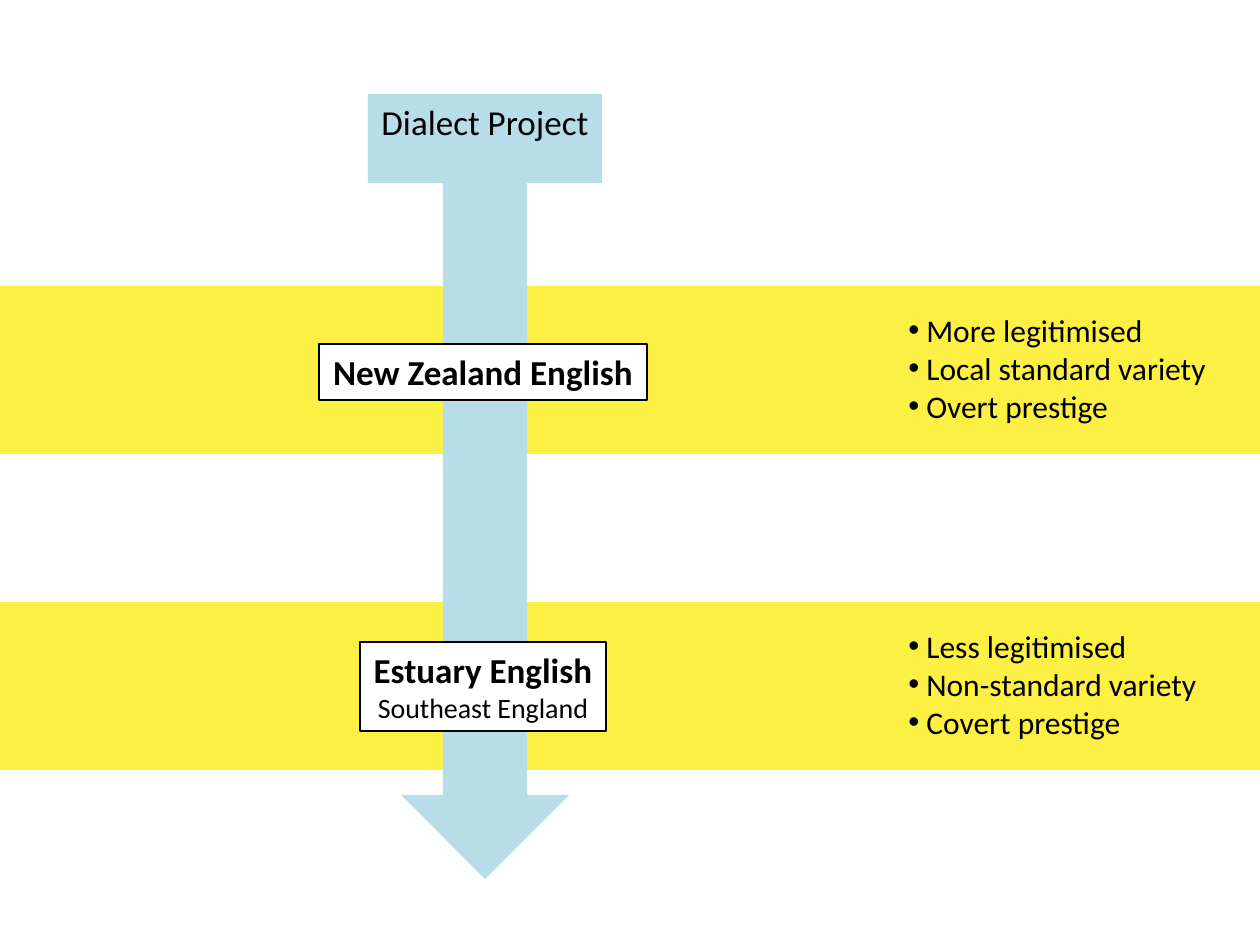
from lxml import etree
from pptx import Presentation
from pptx.dml.color import RGBColor
from pptx.enum.shapes import MSO_SHAPE
from pptx.enum.text import MSO_ANCHOR, PP_ALIGN
from pptx.oxml.ns import qn
from pptx.util import Pt

RECTANGLE, DOWN_ARROW = MSO_SHAPE.RECTANGLE, MSO_SHAPE.DOWN_ARROW
LEFT, CENTER, TOP = PP_ALIGN.LEFT, PP_ALIGN.CENTER, MSO_ANCHOR.TOP

EMU_PER_PX = 914400 / 126
SLIDE_WIDTH, SLIDE_HEIGHT = 1260, 945
BAND_HEIGHT = 168
TRAITS_LEFT, TRAITS_OFFSET, TRAITS_HEIGHT = 896, 19, 127
BULLET_INDENT = 18
YELLOW, BLUE, WHITE, BLACK = "FDF045", "B7DEE8", "FFFFFF", "000000"

# Band top, width of the trait list, traits
BANDS = [
    (602, 316, ["Less legitimised", "Non-standard variety", "Covert prestige"]),
    (286, 326, ["More legitimised", "Local standard variety", "Overt prestige"]),
]
ARROW_BOX = (401, 180, 168, 699)
# Box, fill, outline, lines as (text, size, bold)
LABELS = [
    ((368, 94, 234, 89), BLUE, None, [("Dialect Project", 20, False)]),
    ((319, 344, 328, 56), WHITE, BLACK, [("New Zealand English", 20, True)]),
    ((360, 642, 246, 89), WHITE, BLACK,
     [("Estuary English", 20, True), ("Southeast England", 16, False)]),
]


def px(length):
    return round(length * EMU_PER_PX)


def color(hex_string):
    return RGBColor.from_string(hex_string)


def add_block(slide, kind, box, fill, line=None):
    shape = slide.shapes.add_shape(kind, *map(px, box))
    shape.shadow.inherit = False
    shape.fill.solid()
    shape.fill.fore_color.rgb = color(fill)
    if line:
        shape.line.color.rgb = color(line)
        shape.line.width = Pt(0.75)
    else:
        shape.line.fill.background()
    return shape


def add_bullet(paragraph):
    properties = paragraph._p.get_or_add_pPr()
    properties.set("marL", str(px(BULLET_INDENT)))
    properties.set("indent", str(-px(BULLET_INDENT)))
    etree.SubElement(properties, qn("a:buFont"), typeface="Arial")
    etree.SubElement(properties, qn("a:buChar"), char="•")


def write_lines(shape, lines, align=CENTER, bullets=False):
    frame = shape.text_frame
    frame.word_wrap = False
    frame.vertical_anchor = TOP
    for index, (text, size, bold) in enumerate(lines):
        paragraph = frame.add_paragraph() if index else frame.paragraphs[0]
        paragraph.alignment = align
        if bullets:
            add_bullet(paragraph)
        run = paragraph.add_run()
        run.text = text
        run.font.name = "Calibri"
        run.font.size = Pt(size)
        run.font.bold = bold
        run.font.color.rgb = color(BLACK)


def main():
    presentation = Presentation()
    presentation.slide_width = px(SLIDE_WIDTH)
    presentation.slide_height = px(SLIDE_HEIGHT)
    slide = presentation.slides.add_slide(presentation.slide_layouts[6])

    for top, width, traits in BANDS:
        add_block(slide, RECTANGLE, (0, top, SLIDE_WIDTH, BAND_HEIGHT), YELLOW)
        traits_box = (TRAITS_LEFT, top + TRAITS_OFFSET, width, TRAITS_HEIGHT)
        text_box = slide.shapes.add_textbox(*map(px, traits_box))
        write_lines(text_box, [(trait, 18, False) for trait in traits],
                    align=LEFT, bullets=True)

    add_block(slide, DOWN_ARROW, ARROW_BOX, BLUE)
    for box, fill, line, lines in LABELS:
        write_lines(add_block(slide, RECTANGLE, box, fill, line), lines)

    presentation.save("out.pptx")


if __name__ == "__main__":
    main()
